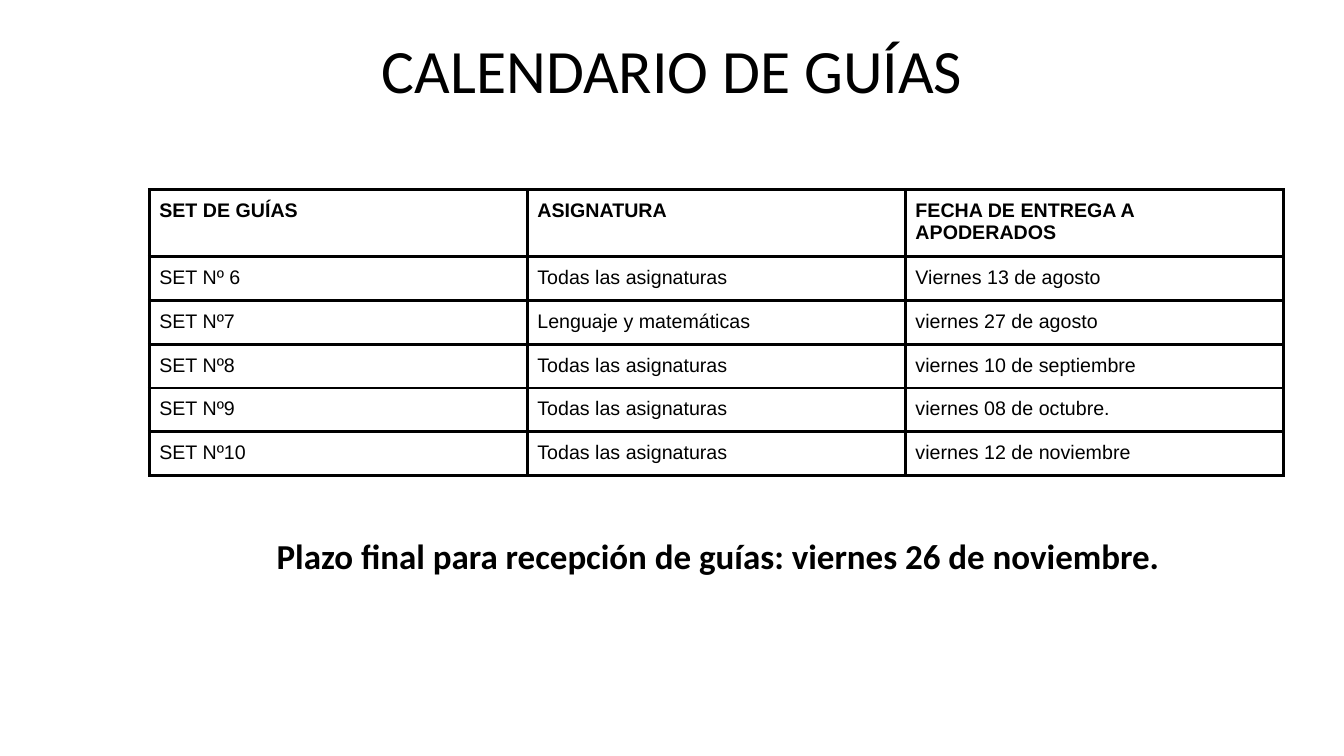
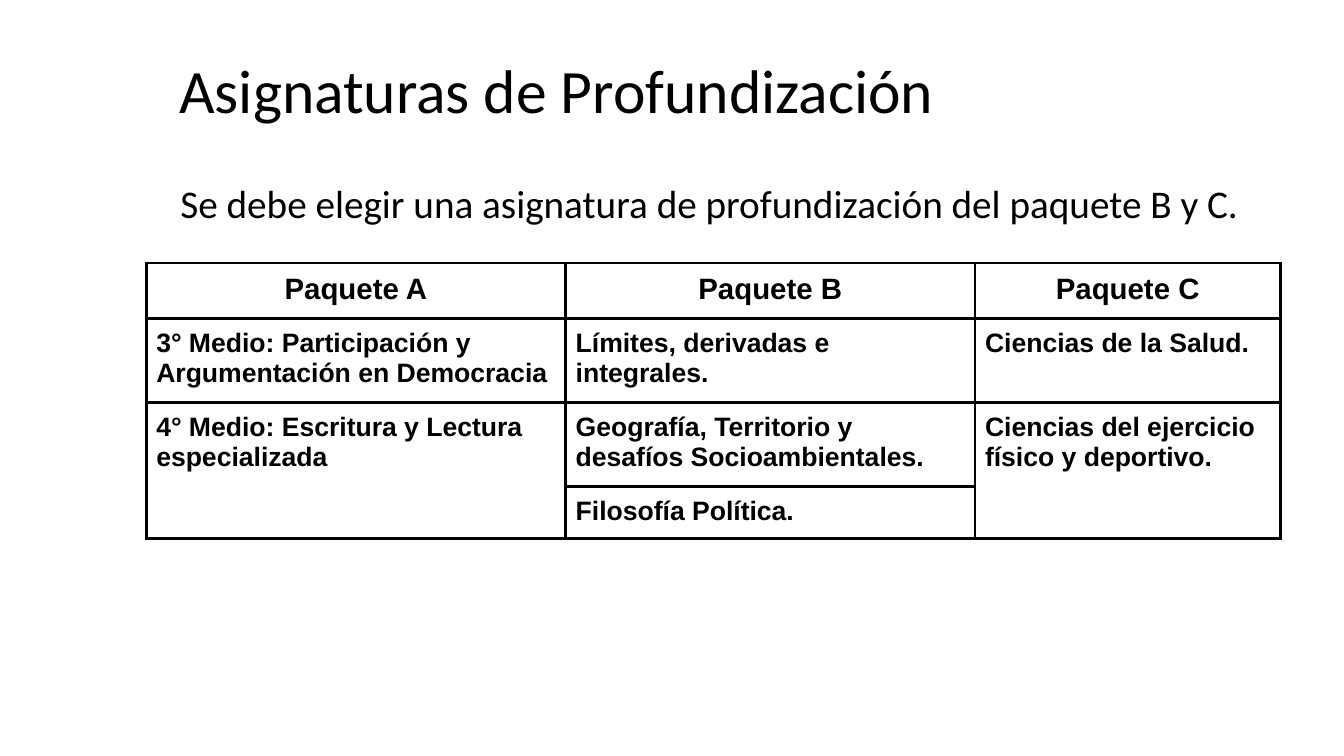
"""Build two school slides: the guide calendar and the elective subjects."""
from lxml import etree
from pptx import Presentation
from pptx.dml.color import RGBColor
from pptx.enum.text import MSO_ANCHOR, PP_ALIGN
from pptx.oxml.ns import qn
from pptx.util import Inches, Pt

LEFT, CENTER = PP_ALIGN.LEFT, PP_ALIGN.CENTER
TOP, MIDDLE = MSO_ANCHOR.TOP, MSO_ANCHOR.MIDDLE
INK, PAPER = "000000", "FFFFFF"
HEADING_FONT, TABLE_FONT = "Calibri", "Arial"
BORDER_WIDTH = Pt(2.25)
MARGINS = ("margin_left", "margin_right", "margin_top", "margin_bottom")

TITLE = {"size": 44, "spacing": 0.9, "anchor": MIDDLE, "inset": 0.05}

SLIDES = [
    {
        "texts": [
            ("CALENDARIO DE GUÍAS", (0.92, 0, 11.5, 1.45), {**TITLE, "align": CENTER}),
            ("Plazo final para recepción de guías: viernes 26 de noviembre.",
             (2.54, 5.2, 9.16, 0.62), {"size": 25, "bold": True, "align": CENTER}),
        ],
        "table": {
            "corner": (1.48, 1.88),
            "columns": [3.75, 3.75, 3.75],
            "heights": [0.64, 0.42, 0.42, 0.42, 0.42, 0.42],
            "header": {"size": 14, "bold": True},
            "body": {"size": 14},
            "merges": [],
            "rows": [
                ("SET DE GUÍAS", "ASIGNATURA", "FECHA DE ENTREGA A APODERADOS"),
                ("SET Nº 6", "Todas las asignaturas", "Viernes 13 de agosto"),
                ("SET Nº7", "Lenguaje y matemáticas", "viernes 27 de agosto"),
                ("SET Nº8", "Todas las asignaturas", "viernes 10 de septiembre"),
                ("SET Nº9", "Todas las asignaturas", "viernes 08 de octubre."),
                ("SET Nº10", "Todas las asignaturas", "viernes 12 de noviembre"),
            ],
        },
    },
    {
        "texts": [
            ("Asignaturas de Profundización", (1.68, 0.2, 8.3, 1.45), TITLE),
            ("Se debe elegir una asignatura de profundización del paquete B y C.",
             (1.69, 1.68, 11.01, 0.67), {"size": 28}),
        ],
        "table": {
            "corner": (1.45, 2.61),
            "columns": [4.16, 4.06, 3.03],
            "heights": [0.52, 0.79, 0.79, 0.49],
            "header": {"size": 21, "bold": True, "align": CENTER},
            "body": {"size": 19, "bold": True},
            "merges": [((2, 0), (3, 0)), ((2, 2), (3, 2))],
            "rows": [
                ("Paquete A", "Paquete B", "Paquete C"),
                ("3° Medio: Participación y Argumentación en Democracia",
                 "Límites, derivadas e integrales.", "Ciencias de la Salud."),
                ("4° Medio: Escritura y Lectura especializada",
                 "Geografía, Territorio y desafíos Socioambientales.",
                 "Ciencias del ejercicio físico y deportivo."),
                (None, "Filosofía Política.", None),
            ],
        },
    },
]


def color(hex_code):
    return RGBColor.from_string(hex_code)


def write(frame, text, font_name, style):
    paragraph = frame.paragraphs[0]
    paragraph.alignment = style.get("align", LEFT)
    paragraph.line_spacing = style.get("spacing", 1.0)
    run = paragraph.add_run()
    run.text = text
    font_values = {"name": font_name, "size": Pt(style["size"]), "bold": style.get("bold", False)}
    for name, value in font_values.items():
        setattr(run.font, name, value)
    run.font.color.rgb = color(INK)


def add_text(slide, text, place, style):
    frame = slide.shapes.add_textbox(*map(Inches, place)).text_frame
    inset = Inches(style.get("inset", 0.1))
    frame_values = {
        "word_wrap": True,
        "vertical_anchor": style.get("anchor", TOP),
        "margin_top": inset,
        "margin_bottom": inset,
    }
    for name, value in frame_values.items():
        setattr(frame, name, value)
    write(frame, text, HEADING_FONT, style)


def format_cell(cell):
    for margin in MARGINS:
        setattr(cell, margin, Inches(0.1))
    properties = cell._tc.get_or_add_tcPr()
    for side in ("a:lnL", "a:lnR", "a:lnT", "a:lnB"):
        border = etree.SubElement(properties, qn(side), w=str(BORDER_WIDTH))
        fill = etree.SubElement(border, qn("a:solidFill"))
        etree.SubElement(fill, qn("a:srgbClr"), val=INK)
    cell.fill.solid()
    cell.fill.fore_color.rgb = color(PAPER)


def add_grid(slide, content):
    rows, columns, heights = content["rows"], content["columns"], content["heights"]
    place = (*content["corner"], sum(columns), sum(heights))
    grid = slide.shapes.add_table(len(rows), len(columns), *map(Inches, place)).table
    grid.horz_banding = False
    grid.first_row = False
    for column, width in zip(grid.columns, columns):
        column.width = Inches(width)
    for row, height in zip(grid.rows, heights):
        row.height = Inches(height)
    for first, last in content["merges"]:
        grid.cell(*first).merge(grid.cell(*last))
    for row_index, row in enumerate(rows):
        style = content["body" if row_index else "header"]
        for column_index, text in enumerate(row):
            cell = grid.cell(row_index, column_index)
            format_cell(cell)
            if text:
                write(cell.text_frame, text, TABLE_FONT, style)


def main():
    deck = Presentation()
    deck.slide_width, deck.slide_height = Inches(13.33), Inches(7.5)
    for content in SLIDES:
        slide = deck.slides.add_slide(deck.slide_layouts[6])
        for text, place, style in content["texts"]:
            add_text(slide, text, place, style)
        add_grid(slide, content["table"])
    deck.save("out.pptx")


if __name__ == "__main__":
    main()
